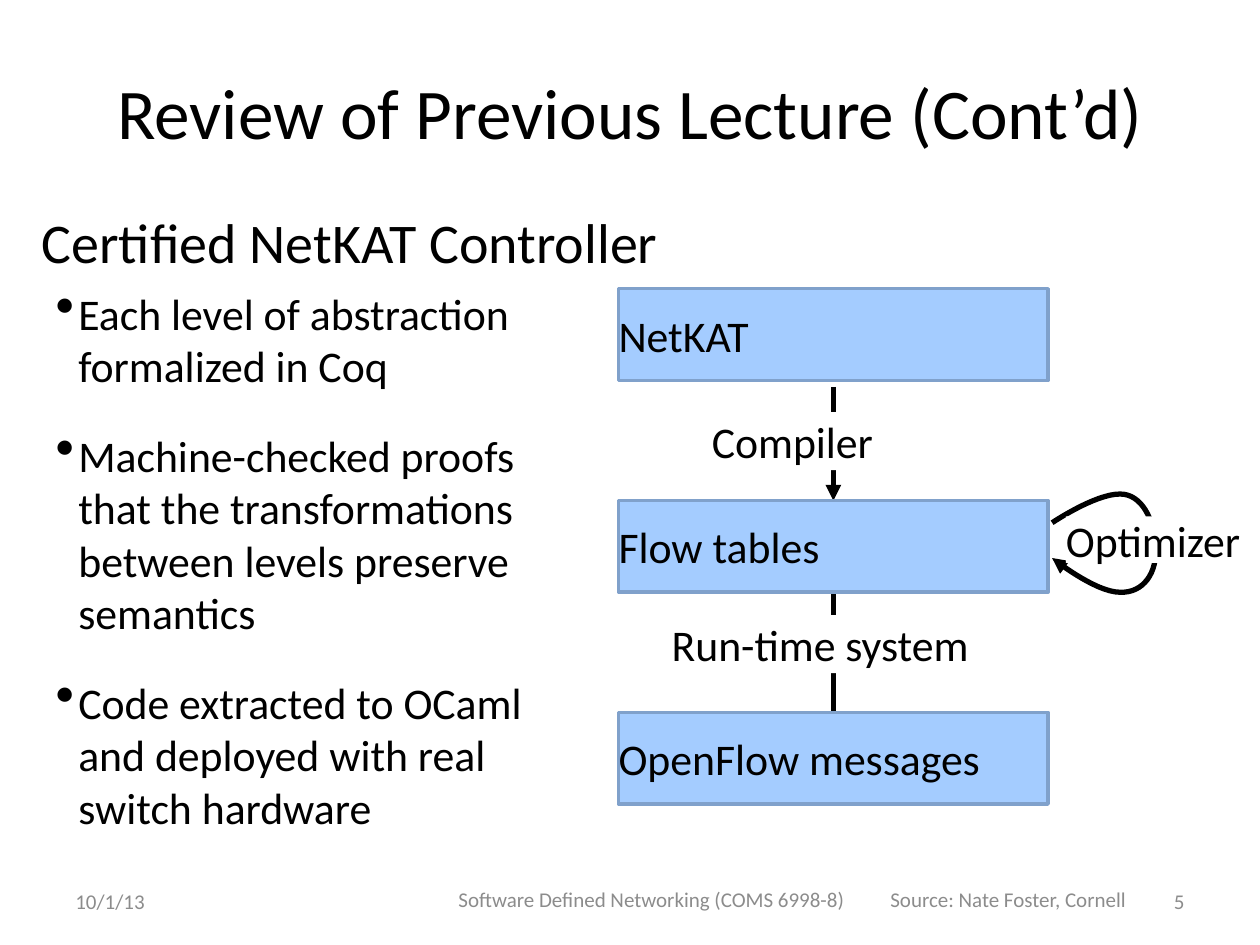
"""Build the lecture review slide on the certified NetKAT controller."""
from lxml import etree
from pptx import Presentation
from pptx.dml.color import RGBColor
from pptx.enum.shapes import MSO_CONNECTOR, MSO_SHAPE
from pptx.enum.text import MSO_ANCHOR, PP_ALIGN
from pptx.oxml.ns import qn
from pptx.util import Cm, Pt

BLACK = RGBColor(0x00, 0x00, 0x00)
WHITE = RGBColor(0xFF, 0xFF, 0xFF)
GREY = RGBColor(0x8C, 0x8C, 0x8C)
BLUE = RGBColor(0xA4, 0xCC, 0xFF)
BLUE_EDGE = RGBColor(0x80, 0xA1, 0xCB)
RECTANGLE = MSO_SHAPE.RECTANGLE
STRAIGHT = MSO_CONNECTOR.STRAIGHT
MIDDLE = MSO_ANCHOR.MIDDLE
LEFT, CENTER, RIGHT = PP_ALIGN.LEFT, PP_ALIGN.CENTER, PP_ALIGN.RIGHT


def write(shape, *texts, size=25, color=BLACK, align=LEFT, inset=0, bullet=None):
    frame = shape.text_frame
    frame.word_wrap = True
    frame.vertical_anchor = MIDDLE
    frame.margin_left = frame.margin_right = Cm(inset)
    frame.margin_top = frame.margin_bottom = Cm(inset / 2)
    for number, text in enumerate(texts):
        paragraph = frame.add_paragraph() if number else frame.paragraphs[0]
        paragraph.alignment = align
        run = paragraph.add_run()
        run.text = text
        run.font.name = "Calibri"
        run.font.size = Pt(size)
        run.font.color.rgb = color
        if bullet:
            paragraph.space_before = Pt(21.1)
            properties = paragraph._p.get_or_add_pPr()
            properties.set("marL", str(Cm(0.74)))
            properties.set("indent", str(Cm(-0.46)))
            etree.SubElement(properties, qn("a:buSzPct"), val="125000")
            etree.SubElement(properties, qn("a:buChar"), char=bullet)


def draw_arrow(arrow):
    arrow.line.color.rgb = BLACK
    arrow.line.width = Pt(3)
    etree.SubElement(arrow.line._get_or_add_ln(), qn("a:tailEnd"), type="triangle")
    etree.SubElement(arrow._element.spPr, qn("a:effectLst"))


deck = Presentation()
deck.slide_width, deck.slide_height = Cm(25.4), Cm(19.05)
shapes = deck.slides.add_slide(deck.slide_layouts[6]).shapes

level_left, level_top, level_width, level_height = 12.47, 5.82, 8.66, 1.85
level_step = 4.27
axis = level_left + level_width / 2
flow_middle = level_top + level_step + level_height / 2

compile_arrow = shapes.add_connector(
    STRAIGHT, Cm(axis), Cm(7.8), Cm(axis), Cm(level_top + level_step))
runtime_arrow = shapes.add_connector(
    STRAIGHT, Cm(axis), Cm(flow_middle), Cm(axis), Cm(flow_middle + level_step))
draw_arrow(compile_arrow)
draw_arrow(runtime_arrow)

levels = []
for row, name in enumerate(["NetKAT", "Flow tables", "OpenFlow messages"]):
    level = shapes.add_shape(
        RECTANGLE, Cm(level_left), Cm(level_top + row * level_step),
        Cm(level_width), Cm(level_height))
    level.shadow.inherit = False
    level.fill.solid()
    level.fill.fore_color.rgb = BLUE
    level.line.color.rgb = BLUE_EDGE
    level.line.width = Pt(2)
    write(level, name)
    levels.append(level)
compile_arrow.end_connect(levels[1], 0)

loop_start = (21.21, 10.54)
loop_curves = [
    [loop_start, (22.07, 9.96), (22.58, 9.96)],
    [(23.01, 9.96), (23.27, 10.46), (23.29, 11.02)],
    [(23.34, 11.53), (23.06, 11.96), (22.58, 11.94)],
    [(22.07, 11.94), (21.21, 11.25), (21.21, 11.25)],
]
steps = 16
loop_points = []
corner = loop_start
for first, second, end in loop_curves:
    for step in range(1, steps + 1):
        t = step / steps
        weights = ((1 - t) ** 3, 3 * t * (1 - t) ** 2, 3 * t ** 2 * (1 - t), t ** 3)
        handles = (corner, first, second, end)
        loop_points.append(tuple(
            Cm(sum(w * handle[axis_no] for w, handle in zip(weights, handles)))
            for axis_no in (0, 1)))
    corner = end
builder = shapes.build_freeform(Cm(loop_start[0]), Cm(loop_start[1]))
builder.add_line_segments(loop_points, close=False)
optimizer_loop = builder.convert_to_shape()
optimizer_loop.fill.background()
draw_arrow(optimizer_loop)

for name, left, top, width, height in [
    ("Compiler", 14.35, 8.31, 4.9, 1.17),
    ("Run-time system", 13.54, 12.4, 6.58, 1.17),
    ("Optimizer", 21.49, 10.41, 3.71, 0.94),
]:
    stage = shapes.add_shape(RECTANGLE, Cm(left), Cm(top), Cm(width), Cm(height))
    stage.shadow.inherit = False
    stage.fill.solid()
    stage.fill.fore_color.rgb = WHITE
    stage.line.fill.background()
    write(stage, name)

points = shapes.add_textbox(Cm(0.84), Cm(5.72), Cm(10.26), Cm(11.13))
write(
    points,
    "Each level of abstraction formalized in Coq",
    "Machine-checked proofs that the transformations between levels preserve semantics",
    "Code extracted to OCaml and deployed with real switch hardware",
    bullet="•",
)

heading = shapes.add_textbox(Cm(0.84), Cm(3.61), Cm(24.56), Cm(2.49))
write(heading, "Certified NetKAT Controller", size=32)

for text, left, top, width, height, align in [
    ("10/1/13", 1.27, 17.65, 5.92, 1.02, LEFT),
    ("Software Defined Networking (COMS 6998-8)", 8.69, 17.58, 8.89, 1.09, CENTER),
    ("5", 18.21, 17.65, 5.92, 1.02, RIGHT),
    ("Source: Nate Foster, Cornell", 15.88, 17.58, 8.89, 1.09, CENTER),
]:
    footer = shapes.add_textbox(Cm(left), Cm(top), Cm(width), Cm(height))
    write(footer, text, size=12, color=GREY, align=align, inset=0.25)

title = shapes.add_textbox(Cm(1.27), Cm(0.64), Cm(22.86), Cm(3.18))
write(title, "Review of Previous Lecture (Cont’d)", size=40.7, align=CENTER, inset=0.25)

deck.save("out.pptx")
